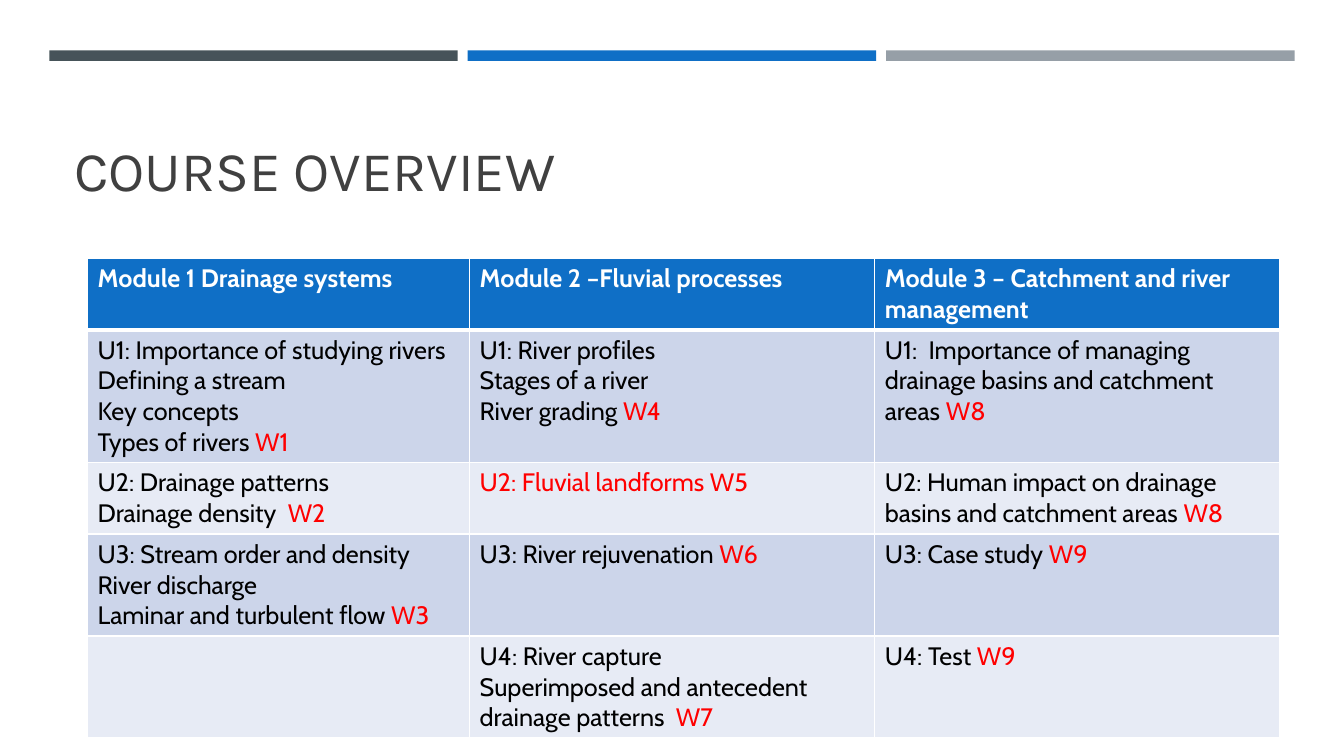
"""Build the course overview slide."""
import lxml.etree
import pptx
import pptx.dml.color
import pptx.enum.shapes
import pptx.enum.text
import pptx.oxml.ns
import pptx.util

Pt = pptx.util.Pt
BLUE, WHITE, BLACK, RED = "0F6FC6", "FFFFFF", "000000", "FF0000"
BANDS = ["CCD5EA", "E7EBF5"]
LINE_HEIGHT, CELL_PADDING = 21.9, 7.2
COLUMN_WIDTHS = [272.9, 289.4, 289.4]
LINES_PER_ROW = [2, 4, 2, 3, 3]
MODULES = ["Module 1 Drainage systems", "Module 2 –Fluvial processes",
           "Module 3 – Catchment and river management"]
UNITS = [
    [["U1: Importance of studying rivers", "Defining a stream", "Key concepts", "Types of rivers |W1"],
     ["U1: River profiles", "Stages of a river", "River grading |W4"],
     ["U1:  Importance of managing drainage basins and catchment areas |W8"]],
    [["U2: Drainage patterns", "Drainage density  |W2"],
     ["|U2: Fluvial landforms W5"],
     ["U2: Human impact on drainage basins and catchment areas |W8"]],
    [["U3: Stream order and density", "River discharge", "Laminar and turbulent flow |W3"],
     ["U3: River rejuvenation |W6"],
     ["U3: Case study |W9"]],
    [[],
     ["U4: River capture", "Superimposed and antecedent drainage patterns  |W7"],
     ["U4: Test |W9"]],
]


def paint(fill, colour):
    """Give a fill one solid colour."""
    fill.solid()
    fill.fore_color.rgb = pptx.dml.color.RGBColor.from_string(colour)


def add_run(paragraph, words, font, size, colour, bold=False):
    """Append one formatted run to a paragraph."""
    run = paragraph.add_run()
    run.text = words
    run.font.name, run.font.size, run.font.bold = font, Pt(size), bold
    run.font.color.rgb = pptx.dml.color.RGBColor.from_string(colour)


def add_top_bars(slide, left, top, width, height):
    """Draw three equal bars across the given box."""
    gap = 7.2
    bar_width = (width - 2 * gap) / 3
    for index, colour in enumerate(["465359", BLUE, "969FA7"]):
        bar = slide.shapes.add_shape(
            pptx.enum.shapes.MSO_SHAPE.RECTANGLE,
            Pt(left + index * (bar_width + gap)), Pt(top), Pt(bar_width), Pt(height))
        bar.shadow.inherit = False
        paint(bar.fill, colour)
        bar.line.fill.background()


def add_title(slide, left, top, width, height):
    """Place the slide title at the bottom of the given box."""
    title = slide.shapes.add_textbox(Pt(left), Pt(top), Pt(width), Pt(height)).text_frame
    title.word_wrap = True
    title.vertical_anchor = pptx.enum.text.MSO_ANCHOR.BOTTOM
    title.paragraphs[0].line_spacing = 0.9
    add_run(title.paragraphs[0], "COURSE OVERVIEW", "Karla", 40, "404040")


def add_borders(cell, top, bottom):
    """Draw white cell borders with the given top and bottom widths."""
    properties = cell._tc.get_or_add_tcPr()
    for side, width in [("L", 1), ("R", 1), ("T", top), ("B", bottom)]:
        border = lxml.etree.SubElement(properties, pptx.oxml.ns.qn(f"a:ln{side}"), w=str(Pt(width)))
        solid = lxml.etree.SubElement(border, pptx.oxml.ns.qn("a:solidFill"))
        lxml.etree.SubElement(solid, pptx.oxml.ns.qn("a:srgbClr"), val=WHITE)


def fill_cell(cell, lines, colour, bold):
    """Write lines into a cell, with the part after a bar in red."""
    for index, line in enumerate(lines):
        frame = cell.text_frame
        paragraph = frame.add_paragraph() if index else frame.paragraphs[0]
        topic, _, week = line.partition("|")
        for words, shade in [(topic, colour), (week, RED)]:
            if words:
                add_run(paragraph, words, "Cabin", 18, shade, bold)


def add_modules_table(slide, left, top):
    """Draw the table of modules and their units from the given corner."""
    heights = [lines * LINE_HEIGHT + CELL_PADDING for lines in LINES_PER_ROW]
    table = slide.shapes.add_table(
        len(heights), len(COLUMN_WIDTHS), Pt(left), Pt(top),
        Pt(sum(COLUMN_WIDTHS)), Pt(sum(heights))).table
    for column, width in zip(table.columns, COLUMN_WIDTHS):
        column.width = Pt(width)
    rows = [[[module] for module in MODULES]] + UNITS
    for row, (height, units) in enumerate(zip(heights, rows)):
        table.rows[row].height = Pt(height)
        header = row == 0
        for column, lines in enumerate(units):
            cell = table.cell(row, column)
            add_borders(cell, 3 if row == 1 else 1, 3 if header else 1)
            paint(cell.fill, BLUE if header else BANDS[(row - 1) % 2])
            fill_cell(cell, lines, WHITE if header else BLACK, header)


def main():
    """Assemble and save the slide."""
    deck = pptx.Presentation()
    deck.slide_width, deck.slide_height = Pt(960), Pt(540)
    slide = deck.slides.add_slide(deck.slide_layouts[6])
    add_top_bars(slide, 35.2, 36, 889.5, 7.5)
    add_title(slide, 46, 55.4, 868.3, 93.9)
    add_modules_table(slide, 62.6, 184.6)
    deck.save("out.pptx")


if __name__ == "__main__":
    main()
